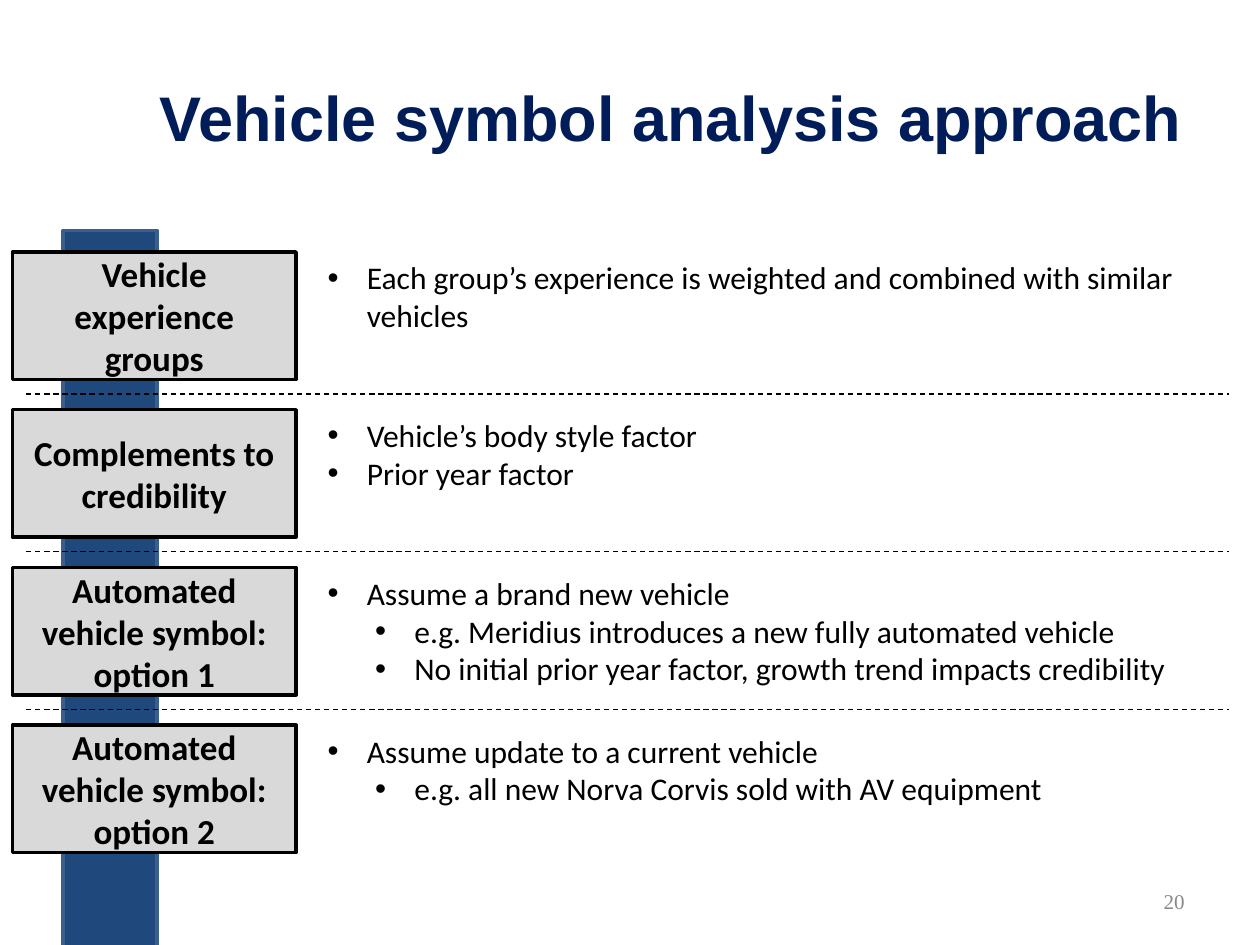
from lxml.etree import SubElement
from pptx import Presentation
from pptx.dml.color import RGBColor
from pptx.enum.dml import MSO_LINE_DASH_STYLE as Dash
from pptx.enum.shapes import MSO_CONNECTOR as Connector, MSO_SHAPE as Shape
from pptx.enum.text import MSO_ANCHOR as Anchor, MSO_AUTO_SIZE as AutoSize, PP_ALIGN as Align
from pptx.oxml.ns import qn
from pptx.util import Cm, Pt

NAVY = RGBColor(0x00, 0x1C, 0x59)
BLUE = RGBColor(0x1F, 0x49, 0x7D)
BLUE_EDGE = RGBColor(0x3A, 0x5F, 0x8C)
LIGHT_GRAY = RGBColor(0xD9, 0xD9, 0xD9)
GRAY = RGBColor(0x89, 0x89, 0x89)
BLACK = RGBColor(0, 0, 0)

TITLE_FONT = {"name": "Arial", "size": Pt(36), "bold": True}
NUMBER_FONT = {"name": "Times New Roman", "size": Pt(12)}
STAGE_FONT = {"name": "Calibri", "size": Pt(20), "bold": True}
POINT_FONT = {"name": "Calibri", "size": Pt(18), "bold": False}

# Each stage: its label and its points as (level, text)
STAGES = [
    ("Vehicle experience groups", [
        (0, "Each group’s experience is weighted and combined with similar vehicles"),
    ]),
    ("Complements to credibility", [
        (0, "Vehicle’s body style factor"),
        (0, "Prior year factor"),
    ]),
    ("Automated vehicle symbol: option 1", [
        (0, "Assume a brand new vehicle"),
        (1, "e.g. Meridius introduces a new fully automated vehicle"),
        (1, "No initial prior year factor, growth trend impacts credibility"),
    ]),
    ("Automated vehicle symbol: option 2", [
        (0, "Assume update to a current vehicle"),
        (1, "e.g. all new Norva Corvis sold with AV equipment"),
    ]),
]
FIRST_TOP, STAGE_STEP = 5.08, 3.18
LINE_GAP = 0.32
POINT_INDENTS = [0.79, 1.75]
HANGING = 0.79


def write(paragraph, text, font_values, color, align):
    paragraph.alignment = align
    run = paragraph.add_run()
    run.text = text
    for key, value in font_values.items():
        setattr(run.font, key, value)
    run.font.color.rgb = color


def add_box(left, top, width, height, fill, edge):
    box = slide.shapes.add_shape(Shape.RECTANGLE, Cm(left), Cm(top), Cm(width), Cm(height))
    box.shadow.inherit = False
    box.fill.solid()
    box.fill.fore_color.rgb = fill
    box.line.color.rgb = edge
    box.line.width = Pt(2)
    return box


prs = Presentation()
prs.slide_width, prs.slide_height = Cm(25.4), Cm(19.05)
slide = prs.slides.add_slide(prs.slide_layouts.get_by_name("Comparison"))

title = slide.shapes.title
title.left, title.top, title.width, title.height = Cm(2.97), Cm(0.76), Cm(22.43), Cm(3.18)
title.text_frame.vertical_anchor = Anchor.MIDDLE
write(title.text_frame.paragraphs[0], "Vehicle symbol analysis approach",
      TITLE_FONT, NAVY, Align.LEFT)

page_number = slide.shapes.add_textbox(Cm(18.21), Cm(17.65), Cm(5.92), Cm(1.02))
page_number.text_frame.word_wrap = True
page_number.text_frame.vertical_anchor = Anchor.MIDDLE
write(page_number.text_frame.paragraphs[0], "20", NUMBER_FONT, GRAY, Align.RIGHT)

add_box(1.27, 4.65, 1.9, 15.04, BLUE, BLUE_EDGE)

for index, (label, points) in enumerate(STAGES):
    top = FIRST_TOP + index * STAGE_STEP

    if index:
        divider_y = Cm(top - LINE_GAP)
        divider = slide.shapes.add_connector(
            Connector.STRAIGHT, Cm(0.53), divider_y, Cm(24.77), divider_y)
        divider.line.color.rgb = BLACK
        divider.line.width = Pt(0.75)
        divider.line.dash_style = Dash.DASH
        SubElement(divider._element.spPr, qn("a:effectLst"))

    stage = add_box(0.25, top, 5.72, 2.57, LIGHT_GRAY, BLACK)
    stage.text_frame.word_wrap = True
    stage.text_frame.vertical_anchor = Anchor.MIDDLE
    write(stage.text_frame.paragraphs[0], label, STAGE_FONT, BLACK, Align.CENTER)

    body = slide.placeholders[index + 1]
    body.left, body.top, body.width = Cm(6.35), Cm(top), Cm(18.42)
    body.height = Cm(2.57 if len(points) > 2 else 1.8)
    frame = body.text_frame
    frame.vertical_anchor = Anchor.TOP
    frame.auto_size = AutoSize.SHAPE_TO_FIT_TEXT
    for number, (level, text) in enumerate(points):
        point = frame.add_paragraph() if number else frame.paragraphs[0]
        point.level = level
        point.space_before = Pt(0)
        properties = point._p.get_or_add_pPr()
        properties.set("marL", str(Cm(POINT_INDENTS[level])))
        properties.set("indent", str(-Cm(HANGING)))
        SubElement(properties, qn("a:buFont"), typeface="Arial")
        SubElement(properties, qn("a:buChar"), char="•")
        write(point, text, POINT_FONT, BLACK, Align.LEFT)

prs.save("out.pptx")
